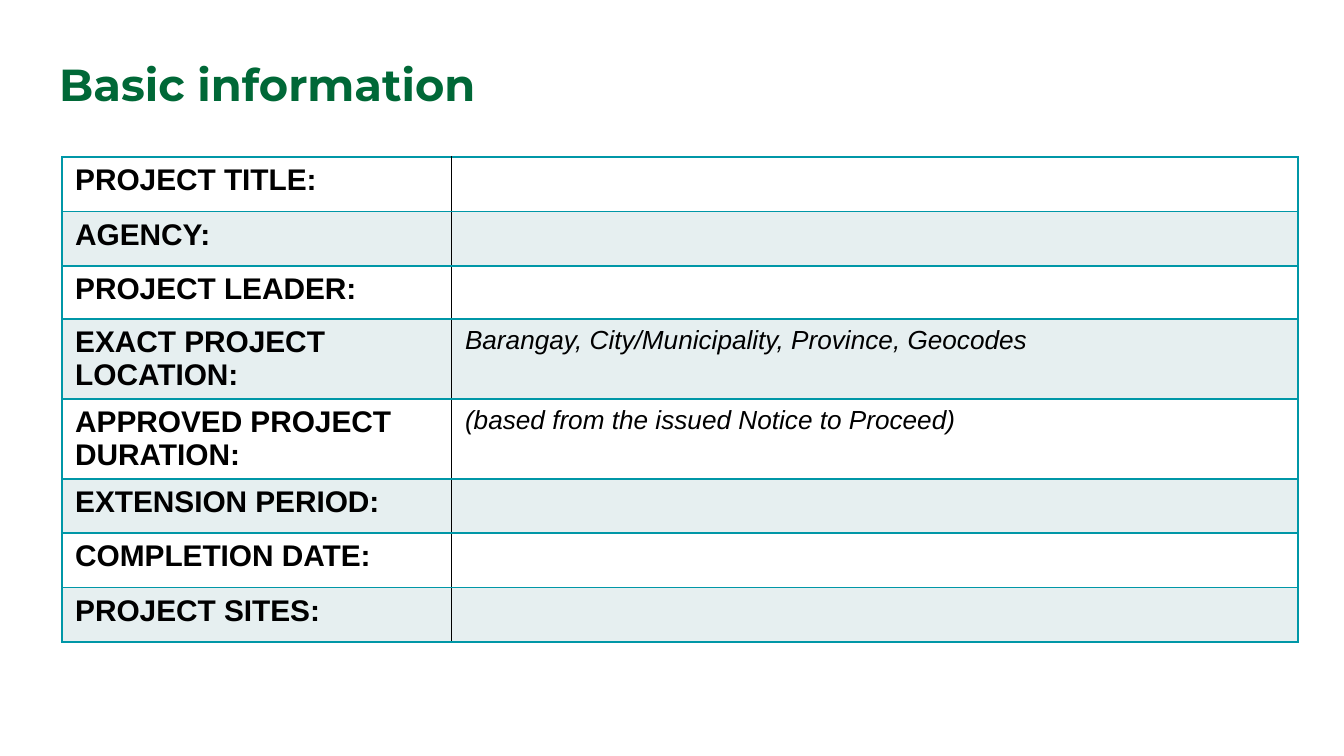
from dataclasses import dataclass

from lxml import etree
from pptx import Presentation
from pptx.dml.color import RGBColor
from pptx.enum.text import MSO_ANCHOR, PP_ALIGN
from pptx.oxml.ns import qn
from pptx.util import Inches, Pt

LEFT, MIDDLE = PP_ALIGN.LEFT, MSO_ANCHOR.MIDDLE
TITLE_ONLY = 5
WIDTH = Inches(10)
HEIGHT = WIDTH * 9 // 16
ROW, SHORT_ROW, TALL_ROW = 7.2, 7, 10.58
COLUMNS = (29, 63)

ROWS = (
    ("PROJECT TITLE:", "", ROW),
    ("AGENCY:", "", ROW),
    ("PROJECT LEADER:", "", SHORT_ROW),
    ("EXACT PROJECT LOCATION:", "Barangay, City/Municipality, Province, Geocodes", TALL_ROW),
    ("APPROVED PROJECT DURATION:", "(based from the issued Notice to Proceed)", TALL_ROW),
    ("EXTENSION PERIOD:", "", ROW),
    ("COMPLETION DATE:", "", ROW),
    ("PROJECT SITES:", "", ROW),
)


@dataclass(frozen=True)
class Theme:
    """Colours, fonts and type sizes of the slide."""
    title: str = "006837"
    text: str = "000000"
    rule: str = "0097A7"
    divider: str = "000000"
    bands: tuple = ("FFFFFF", "E6EFF0")
    title_font: str = "Montserrat"
    body_font: str = "Arial"
    title_size: int = 24
    label_size: int = 16
    value_size: int = 14


THEME = Theme()


def across(percent):
    """Return a percentage of the slide width."""
    return round(WIDTH * percent / 100)


def down(percent):
    """Return a percentage of the slide height."""
    return round(HEIGHT * percent / 100)


def format_runs(p, font, size, color, bold=False, italic=False):
    """Style every run of a paragraph."""
    for r in p.runs:
        r.font.name, r.font.size = font, Pt(size)
        r.font.bold, r.font.italic = bold, italic
        r.font.color.rgb = RGBColor.from_string(color)


def set_title(s, text):
    """Place and style the slide title."""
    sp = s.shapes.title
    sp.left, sp.top = across(3.4), down(5.4)
    sp.width, sp.height = across(93.2), down(11.2)
    tf = sp.text_frame
    tf.text, tf.vertical_anchor = text, MIDDLE
    tf.margin_left = tf.margin_right = tf.margin_top = tf.margin_bottom = Inches(0.1)
    p = tf.paragraphs[0]
    p.alignment = LEFT
    format_runs(p, THEME.title_font, THEME.title_size, THEME.title, bold=True)


def set_borders(cell, left, right):
    """Draw thin borders with the given side colours."""
    tc_pr = cell._tc.get_or_add_tcPr()
    sides = {"lnL": left, "lnR": right, "lnT": THEME.rule, "lnB": THEME.rule}
    for i, (side, color) in enumerate(sides.items()):
        ln = etree.Element(qn(f"a:{side}"), w=str(Pt(1)))
        fill = etree.SubElement(ln, qn("a:solidFill"))
        etree.SubElement(fill, qn("a:srgbClr"), val=color)
        tc_pr.insert(i, ln)


def fill_cell(cell, text, band, size, **style):
    """Write one cell and paint its band."""
    cell.fill.solid()
    cell.fill.fore_color.rgb = RGBColor.from_string(band)
    p = cell.text_frame.paragraphs[0]
    if text:
        p.text = text
        format_runs(p, THEME.body_font, size, THEME.text, **style)
    else:
        p._p.get_or_add_endParaRPr().set("sz", str(size * 100))


def add_information_table(s):
    """Add the banded table of labels and values."""
    height = down(sum(h for _, _, h in ROWS))
    table = s.shapes.add_table(len(ROWS), len(COLUMNS), across(4.6), down(20.8),
                               across(sum(COLUMNS)), height).table
    table.first_row = table.horz_banding = False
    for column, percent in zip(table.columns, COLUMNS):
        column.width = across(percent)
    for i, (label, value, row_height) in enumerate(ROWS):
        table.rows[i].height = down(row_height)
        band = THEME.bands[i % 2]
        label_cell, value_cell = table.cell(i, 0), table.cell(i, 1)
        fill_cell(label_cell, label, band, THEME.label_size, bold=True)
        fill_cell(value_cell, value, band, THEME.value_size, italic=True)
        set_borders(label_cell, THEME.rule, THEME.divider)
        set_borders(value_cell, THEME.divider, THEME.rule)


def main():
    """Build and save the slide."""
    prs = Presentation()
    prs.slide_width, prs.slide_height = WIDTH, HEIGHT
    s = prs.slides.add_slide(prs.slide_layouts[TITLE_ONLY])
    set_title(s, "Basic information")
    add_information_table(s)
    prs.save("out.pptx")


if __name__ == "__main__":
    main()
